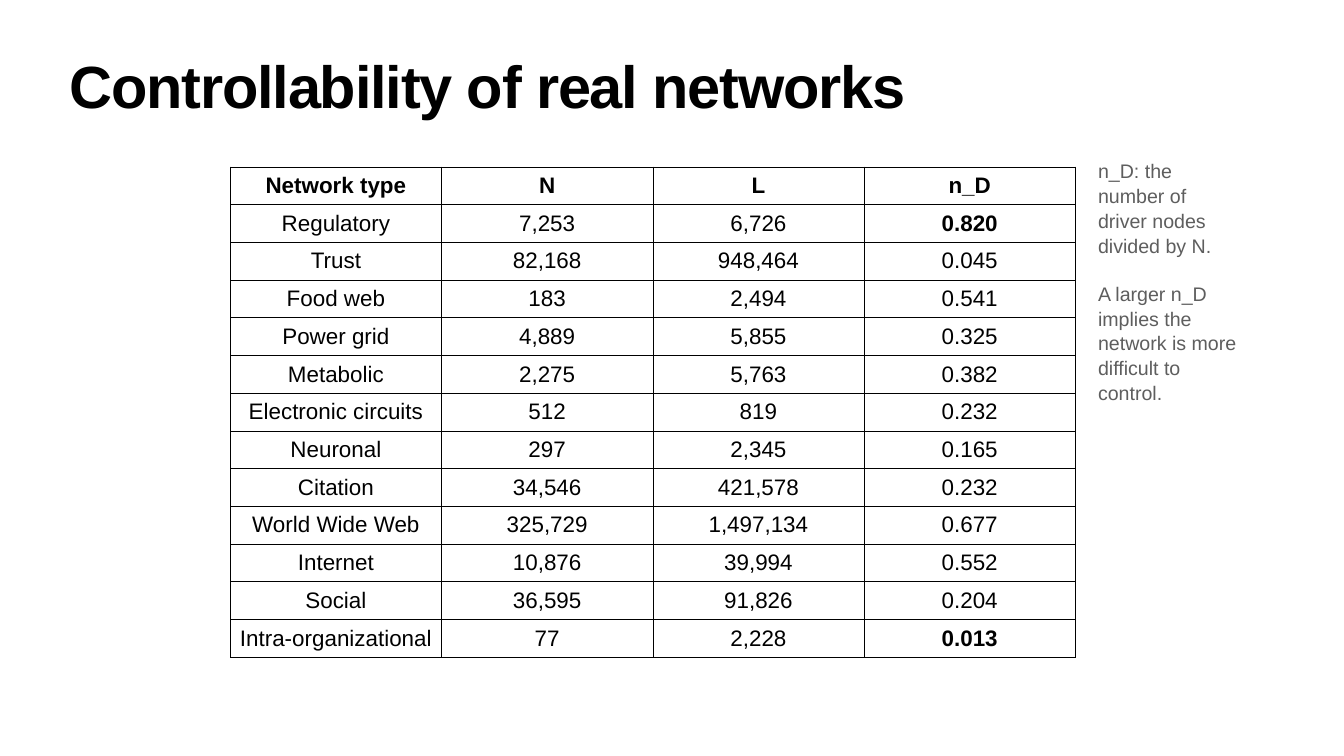
from dataclasses import dataclass

from lxml import etree
from pptx import Presentation
from pptx.dml.color import RGBColor
from pptx.enum import text as t
from pptx.oxml import ns
from pptx.util import Inches, Pt


@dataclass(frozen=True)
class Theme:
    face: str = "Arial"
    ink: str = "000000"
    grey: str = "5E5E5E"
    title: int = 85
    body: int = 32
    note: int = 28
    pad: float = 0.06
    rule: int = 1


THEME = Theme()
HEAD = ("Network type", "N", "L", "n_D")
ROWS = (
    ("Regulatory", "7,253", "6,726", "0.820"),
    ("Trust", "82,168", "948,464", "0.045"),
    ("Food web", "183", "2,494", "0.541"),
    ("Power grid", "4,889", "5,855", "0.325"),
    ("Metabolic", "2,275", "5,763", "0.382"),
    ("Electronic circuits", "512", "819", "0.232"),
    ("Neuronal", "297", "2,345", "0.165"),
    ("Citation", "34,546", "421,578", "0.232"),
    ("World Wide Web", "325,729", "1,497,134", "0.677"),
    ("Internet", "10,876", "39,994", "0.552"),
    ("Social", "36,595", "91,826", "0.204"),
    ("Intra-organizational", "77", "2,228", "0.013"),
)
BOLD = {"0.820", "0.013"}
NOTES = (
    "n_D: the number of driver nodes divided by N.",
    "A larger n_D implies the network is more difficult to control.",
)


def apply(item, form):
    for name, value in form.items():
        setattr(item, name, value)


def pads(stem):
    return {f"{stem}_{side}": Inches(THEME.pad)
            for side in ("left", "top", "right", "bottom")}


def write(para, words, size, color=THEME.ink, bold=False):
    run = para.add_run()
    run.text = words
    apply(run.font, {"name": THEME.face, "size": Pt(size), "bold": bold})
    run.font.color.rgb = RGBColor.from_string(color)
    return run


def add_box(slide, box, anchor):
    frame = slide.shapes.add_textbox(*map(Inches, box)).text_frame
    apply(frame, {"word_wrap": True, "vertical_anchor": anchor,
                  **pads("margin")})
    return frame


def add_title(slide, box):
    para = add_box(slide, box, t.MSO_ANCHOR.TOP).paragraphs[0]
    para.line_spacing = 0.8
    run = write(para, "Controllability of real networks", THEME.title, bold=True)
    run.font._element.set("spc", "-170")


def rule_cell(cell):
    """Draw all four borders, placed ahead of the cell's fill."""
    props = cell._tc.get_or_add_tcPr()
    for spot, side in enumerate(("lnL", "lnR", "lnT", "lnB")):
        line = etree.Element(ns.qn(f"a:{side}"), w=str(Pt(THEME.rule)))
        fill = etree.SubElement(line, ns.qn("a:solidFill"))
        etree.SubElement(fill, ns.qn("a:srgbClr"), val=THEME.ink)
        props.insert(spot, line)


def add_grid(slide, box):
    data = (HEAD, *ROWS)
    grid = slide.shapes.add_table(len(data), len(HEAD), *map(Inches, box)).table
    apply(grid, {"first_row": False, "horz_banding": False})
    for col in grid.columns:
        col.width = Inches(box[2] / len(HEAD))
    for r, row in enumerate(data):
        grid.rows[r].height = Inches(box[3] / len(data))
        for c, words in enumerate(row):
            cell = grid.cell(r, c)
            apply(cell, {"vertical_anchor": t.MSO_ANCHOR.MIDDLE,
                         **pads("margin")})
            cell.fill.background()
            rule_cell(cell)
            para = cell.text_frame.paragraphs[0]
            para.alignment = t.PP_ALIGN.CENTER
            write(para, words, THEME.body, bold=r == 0 or words in BOLD)


def add_notes(slide, box):
    frame = add_box(slide, box, t.MSO_ANCHOR.MIDDLE)
    for n, words in enumerate(NOTES):
        para = frame.add_paragraph() if n else frame.paragraphs[0]
        apply(para, {"line_spacing": 1.05, "space_before": Pt(34 if n else 0)})
        write(para, words, THEME.note, THEME.grey)


def main():
    deck = Presentation()
    apply(deck, {"slide_width": Inches(26.67), "slide_height": Inches(15)})
    slide = deck.slides.add_slide(deck.slide_layouts[6])
    add_title(slide, (1.32, 1.18, 24.03, 1.57))
    add_grid(slide, (4.57, 3.31, 16.77, 9.73))
    add_notes(slide, (21.73, 3.17, 2.91, 4.82))
    deck.save("out.pptx")


if __name__ == "__main__":
    main()
